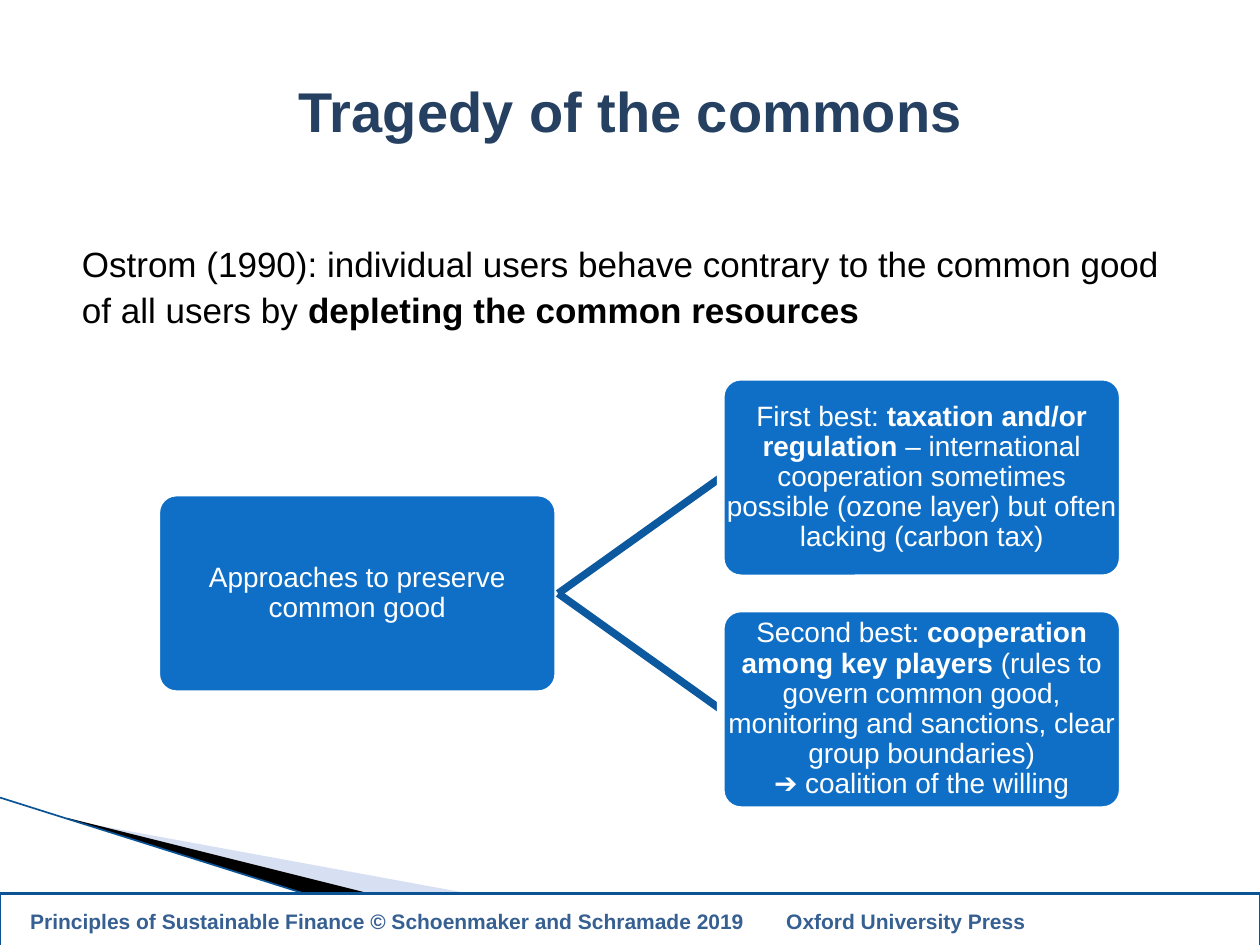
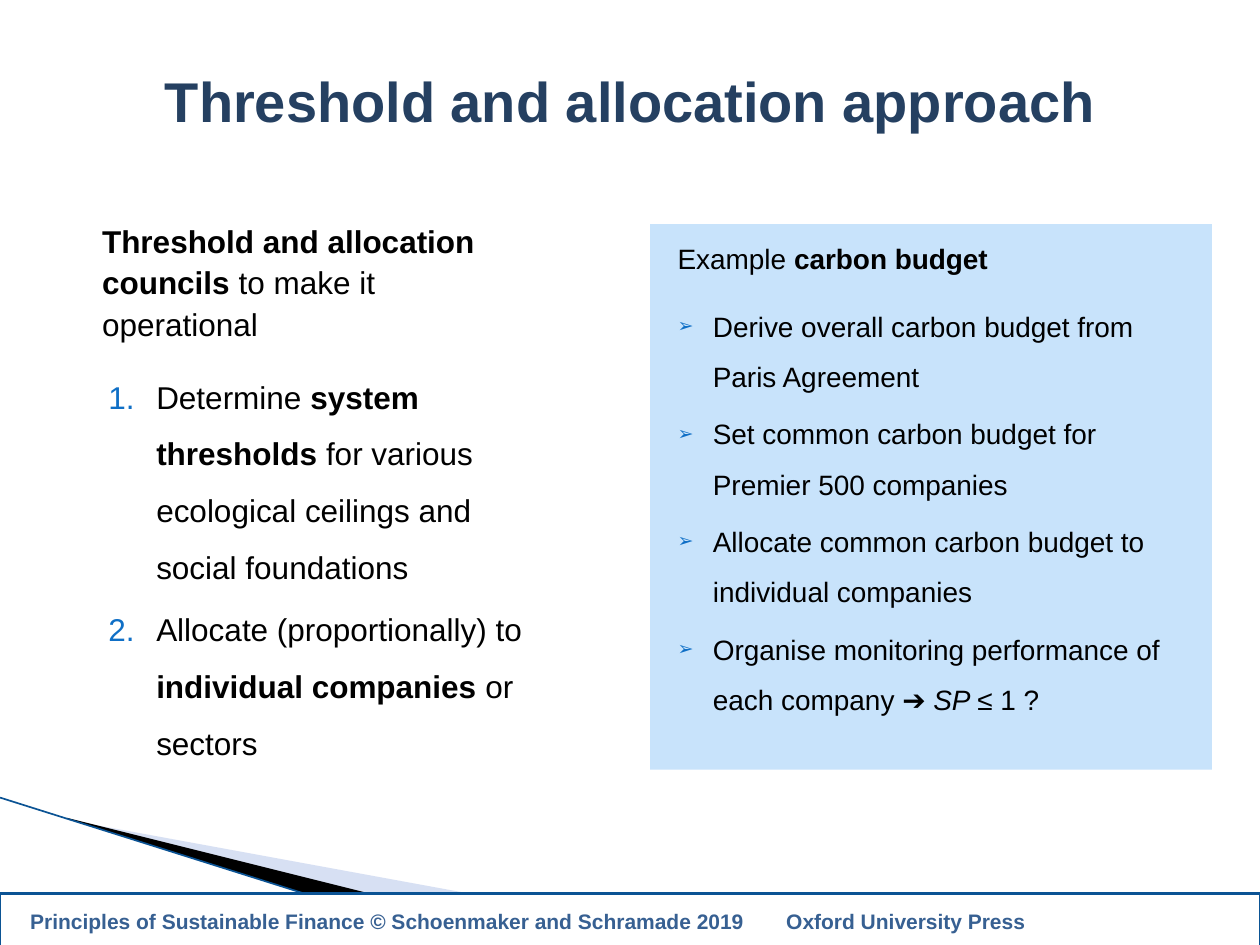
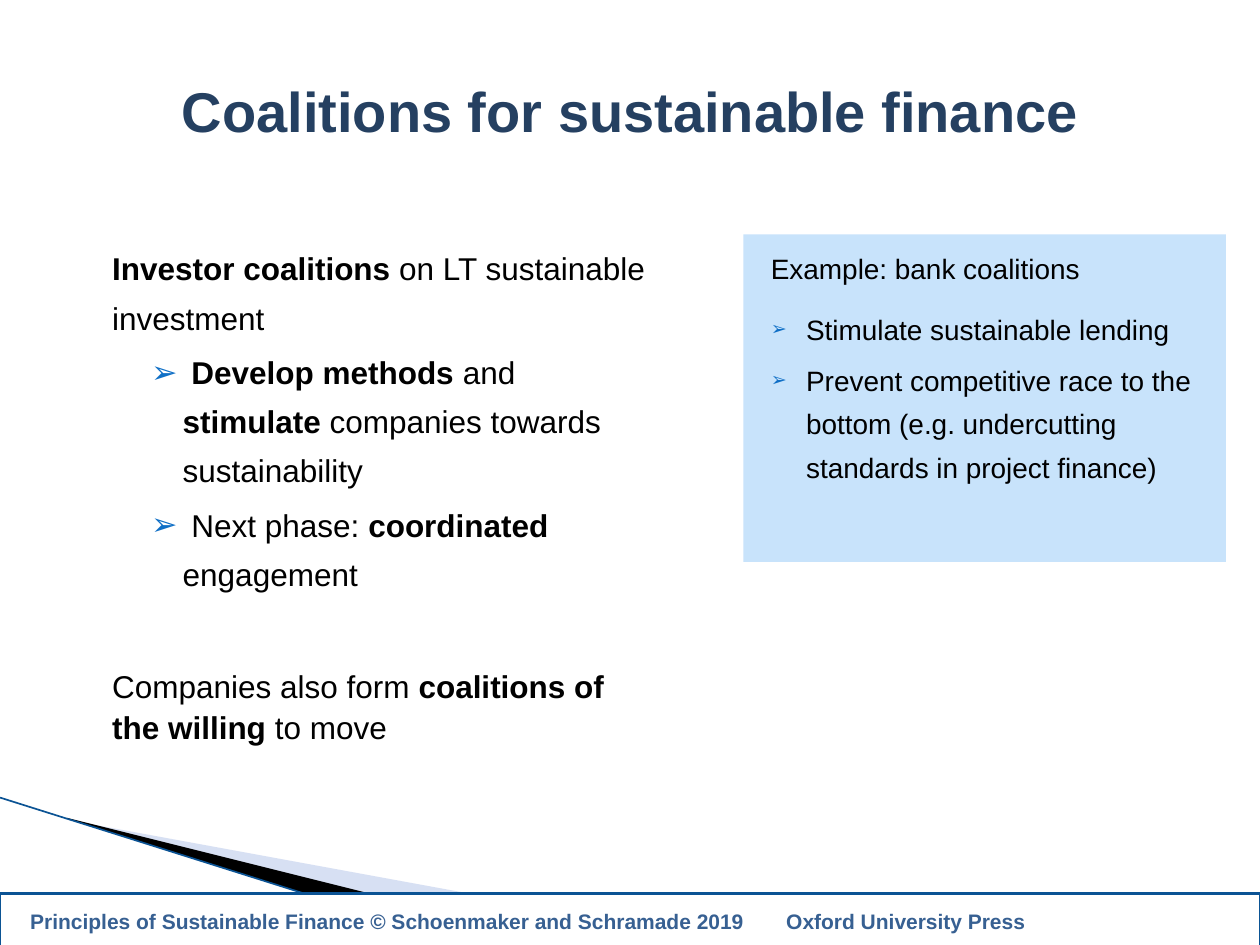
import pptx
import pptx.dml.color
import pptx.enum.shapes
import pptx.enum.text
import pptx.util
from lxml import etree
from pptx.oxml.ns import qn
from pptx.util import Inches


class Theme:
    font = "Arial"
    title_color = "254061"
    text_color = "000000"
    white = "FFFFFF"
    accent = "0F6FC6"
    branch_color = "0C599F"
    panel_color = "C8E3FB"
    footer_color = "376092"
    rule_color = "0B5394"
    wedge_color = "9DB2E1"
    title_size = 32
    lead_size = 20
    body_size = 18
    panel_size = 16
    footer_size = 12
    top_inset = 0.11


STYLES = {
    "lead": dict(left=0.12, hang=0, spacing=1.1, before=0, after=6),
    "loose lead": dict(left=0.12, hang=0, spacing=1.3, before=0, after=0),
    "closing": dict(left=0.12, hang=0, spacing=1.1, before=40, after=6),
    "number": dict(left=0.55, hang=-0.38, spacing=1.5, before=3.2, after=0, level=1, bullet="number"),
    "arrow": dict(left=0.68, hang=-0.25, spacing=1.3, before=3.2, after=0, level=1, bullet="➢"),
    "panel arrow": dict(left=0.4, hang=-0.28, spacing=1.5, before=4, after=0, bullet="➢", percent=68),
    "tight panel arrow": dict(left=0.4, hang=-0.28, spacing=1.3, before=4, after=0, bullet="➢", percent=68),
    "node": dict(left=0, hang=0, spacing=0.9, before=0, after=0, align="CENTER"),
    "title": dict(left=0, hang=0, spacing=1.0, before=0, after=0, align="CENTER"),
    "footer": dict(left=0, hang=0, spacing=1.0, before=0, after=0, tab=9.44),
}


def write_text(shape, paragraphs, size, color, inset=(0.1, 0.05, 0.1, 0.05), anchor="TOP"):
    frame = shape.text_frame
    frame.word_wrap = True
    frame.auto_size = pptx.enum.text.MSO_AUTO_SIZE.NONE
    frame.vertical_anchor = getattr(pptx.enum.text.MSO_ANCHOR, anchor)
    frame.margin_left, frame.margin_top, frame.margin_right, frame.margin_bottom = map(Inches, inset)
    for index, (style_name, runs) in enumerate(paragraphs):
        style = STYLES[style_name]
        paragraph = frame.add_paragraph() if index else frame.paragraphs[0]
        paragraph.level = style.get("level", 0)
        paragraph.alignment = getattr(pptx.enum.text.PP_ALIGN, style.get("align", "LEFT"))
        paragraph.line_spacing = style["spacing"]
        paragraph.space_before = pptx.util.Pt(style["before"])
        paragraph.space_after = pptx.util.Pt(style["after"])
        properties = paragraph._p.get_or_add_pPr()
        properties.set("marL", str(Inches(style["left"])))
        properties.set("indent", str(Inches(style["hang"])))
        bullet = style.get("bullet")
        if bullet:
            bullet_color = etree.SubElement(properties, qn("a:buClr"))
            etree.SubElement(bullet_color, qn("a:srgbClr"), val=Theme.accent)
            etree.SubElement(properties, qn("a:buSzPct"), val=str(style.get("percent", 100) * 1000))
            etree.SubElement(properties, qn("a:buFont"), typeface=Theme.font)
        if bullet == "number":
            etree.SubElement(properties, qn("a:buAutoNum"), type="arabicPeriod")
        elif bullet:
            etree.SubElement(properties, qn("a:buChar"), char=bullet)
        else:
            etree.SubElement(properties, qn("a:buNone"))
        if "tab" in style:
            tabs = etree.SubElement(properties, qn("a:tabLst"))
            etree.SubElement(tabs, qn("a:tab"), pos=str(Inches(style["tab"])), algn="r")
        for text, emphasis in runs:
            if text == "\n":
                paragraph.add_line_break()
                continue
            run = paragraph.add_run()
            run.text = text
            run.font.name = Theme.font
            run.font.size = pptx.util.Pt(size)
            run.font.bold = emphasis == "bold"
            run.font.italic = emphasis == "italic"
            run.font.color.rgb = pptx.dml.color.RGBColor.from_string(color)


def paint(shape, fill, line=None, width=1):
    shape.shadow.inherit = False
    shape.fill.solid()
    shape.fill.fore_color.rgb = pptx.dml.color.RGBColor.from_string(fill)
    if line:
        shape.line.color.rgb = pptx.dml.color.RGBColor.from_string(line)
        shape.line.width = pptx.util.Pt(width)
    else:
        shape.line.fill.background()


SLIDES = [
    dict(
        title="Tragedy of the commons", title_top=0.52,
        body_box=(0.43, 1.78, 9.06, 1.21), body_size=Theme.lead_size,
        body=[("lead", [
            ("Ostrom (1990): individual users behave contrary to the common good of all users by ", ""),
            ("depleting the common resources", "bold")])],
    ),
    dict(
        title="Threshold and allocation approach", title_top=0.44,
        body_box=(0.59, 1.62, 3.7, 4.8), body_size=Theme.body_size,
        body=[
            ("lead", [("Threshold and allocation councils ", "bold"), ("to make it operational", "")]),
            ("number", [("Determine ", ""), ("system thresholds ", "bold"),
                        ("for various ecological ceilings and social foundations", "")]),
            ("number", [("Allocate (proportionally) to", ""), (" individual companies ", "bold"),
                        ("or sectors", "")]),
        ],
        panel_box=(5.16, 1.78, 4.46, 4.33),
        panel=[
            ("lead", [("Example ", ""), ("carbon budget", "bold")]),
            ("panel arrow", [("Derive overall carbon budget from Paris Agreement", "")]),
            ("panel arrow", [("Set common carbon budget for Premier 500 companies", "")]),
            ("panel arrow", [("Allocate common carbon budget to individual companies", "")]),
            ("panel arrow", [("Organise monitoring performance of each company ➔ ", ""),
                             ("SP ", "italic"), ("≤ 1 ?", "")]),
        ],
    ),
    dict(
        title="Coalitions for sustainable finance", title_top=0.52,
        body_box=(0.67, 1.78, 4.57, 4.33), body_size=Theme.body_size,
        body=[
            ("loose lead", [("Investor coalitions ", "bold"), ("on LT sustainable investment", "")]),
            ("arrow", [(" Develop methods ", "bold"), ("and ", ""), ("stimulate", "bold"),
                       (" companies towards sustainability", "")]),
            ("arrow", [(" Next phase: ", ""), ("coordinated", "bold"), (" engagement", "")]),
            ("closing", [("Companies also form ", ""), ("coalitions of the willing ", "bold"),
                         ("to move", "")]),
        ],
        panel_box=(5.9, 1.86, 3.83, 2.6),
        panel=[
            ("lead", [("Example: bank coalitions", "")]),
            ("tight panel arrow", [("Stimulate sustainable lending", "")]),
            ("tight panel arrow", [("Prevent competitive race to the bottom "
                                    "(e.g. undercutting standards in project finance)", "")]),
        ],
    ),
]

WEDGES = [
    (Theme.wedge_color, 40, [(0.55, 6.51), (5.95, 7.5), (4.56, 7.5), (0.55, 6.5)]),
    (Theme.text_color, 100, [(0.53, 6.49), (4.57, 7.5), (3.72, 7.5), (0.54, 6.5)]),
]

presentation = pptx.Presentation()
presentation.slide_width = Inches(10)
presentation.slide_height = Inches(7.5)

for content in SLIDES:
    slide = presentation.slides.add_slide(presentation.slide_layouts[1])
    shapes = slide.shapes

    title = shapes.title
    title.left, title.top, title.width, title.height = map(Inches, (0.28, content["title_top"], 9.45, 0.71))
    write_text(title, [("title", [(content["title"], "bold")])], Theme.title_size, Theme.title_color,
               anchor="MIDDLE")

    body = slide.placeholders[1]
    body.left, body.top, body.width, body.height = map(Inches, content["body_box"])
    write_text(body, content["body"], content["body_size"], Theme.text_color, (0.1, Theme.top_inset, 0.1, 0.05))

    for color, opacity, points in WEDGES:
        corners = [(Inches(x), Inches(y)) for x, y in points]
        builder = shapes.build_freeform(*corners[0], scale=1.0)
        builder.add_line_segments(corners[1:], close=True)
        wedge = builder.convert_to_shape()
        paint(wedge, color)
        if opacity < 100:
            wedge_fill = wedge._element.spPr.find(qn("a:solidFill"))[0]
            etree.SubElement(wedge_fill, qn("a:alpha"), val=str(opacity * 1000))

    edge = shapes.add_connector(pptx.enum.shapes.MSO_CONNECTOR.STRAIGHT,
                                Inches(0), Inches(6.33), Inches(3.71), Inches(7.5))
    edge.line.color.rgb = pptx.dml.color.RGBColor.from_string(Theme.rule_color)
    edge.line.width = pptx.util.Pt(0.95)
    etree.SubElement(edge._element.spPr, qn("a:effectLst"))

    footer = shapes.add_shape(pptx.enum.shapes.MSO_SHAPE.RECTANGLE,
                              Inches(0), Inches(7.09), Inches(10), Inches(0.44))
    paint(footer, Theme.white, Theme.rule_color, 1.5)
    write_text(footer, [("footer", [
        ("Principles of Sustainable Finance © Schoenmaker and Schramade 2019\tOxford University Press", "bold")])],
        Theme.footer_size, Theme.footer_color, (0.24, 0.05, 0.1, 0.05), "MIDDLE")

    if "panel" in content:
        panel = shapes.add_shape(pptx.enum.shapes.MSO_SHAPE.RECTANGLE, *map(Inches, content["panel_box"]))
        paint(panel, Theme.panel_color)
        write_text(panel, content["panel"], Theme.panel_size, Theme.text_color,
                   (0.1, Theme.top_inset, 0.1, 0.05))

NODES = [
    (1.24, 3.91, [("Approaches to preserve common good", "")]),
    (5.72, 2.99, [("First best: ", ""), ("taxation and/or regulation ", "bold"),
                  ("– international cooperation sometimes possible (ozone layer) "
                   "but often lacking (carbon tax)", "")]),
    (5.72, 4.83, [("Second best: ", ""), ("cooperation among key players ", "bold"),
                  ("(rules to govern common good, monitoring and sanctions, clear group boundaries)", ""),
                  ("\n", ""), ("➔ coalition of the willing", "")]),
]

shapes = presentation.slides[0].shapes
root = None
for left, top, runs in NODES:
    if root is not None:
        branch = shapes.add_connector(pptx.enum.shapes.MSO_CONNECTOR.STRAIGHT, 0, 0, 0, 0)
        branch.line.color.rgb = pptx.dml.color.RGBColor.from_string(Theme.branch_color)
        branch.line.width = pptx.util.Pt(4.33)
        etree.SubElement(branch._element.spPr, qn("a:effectLst"))
        branch.begin_connect(root, 3)
    node = shapes.add_shape(pptx.enum.shapes.MSO_SHAPE.ROUNDED_RECTANGLE,
                            Inches(left), Inches(top), Inches(3.19), Inches(1.6))
    node.adjustments[0] = 0.1
    paint(node, Theme.accent, Theme.white, 4.33)
    write_text(node, [("node", runs)], Theme.panel_size, Theme.white, (0, 0, 0, 0), "MIDDLE")
    if root is None:
        root = node
    else:
        branch.end_connect(node, 1)

presentation.save("out.pptx")
